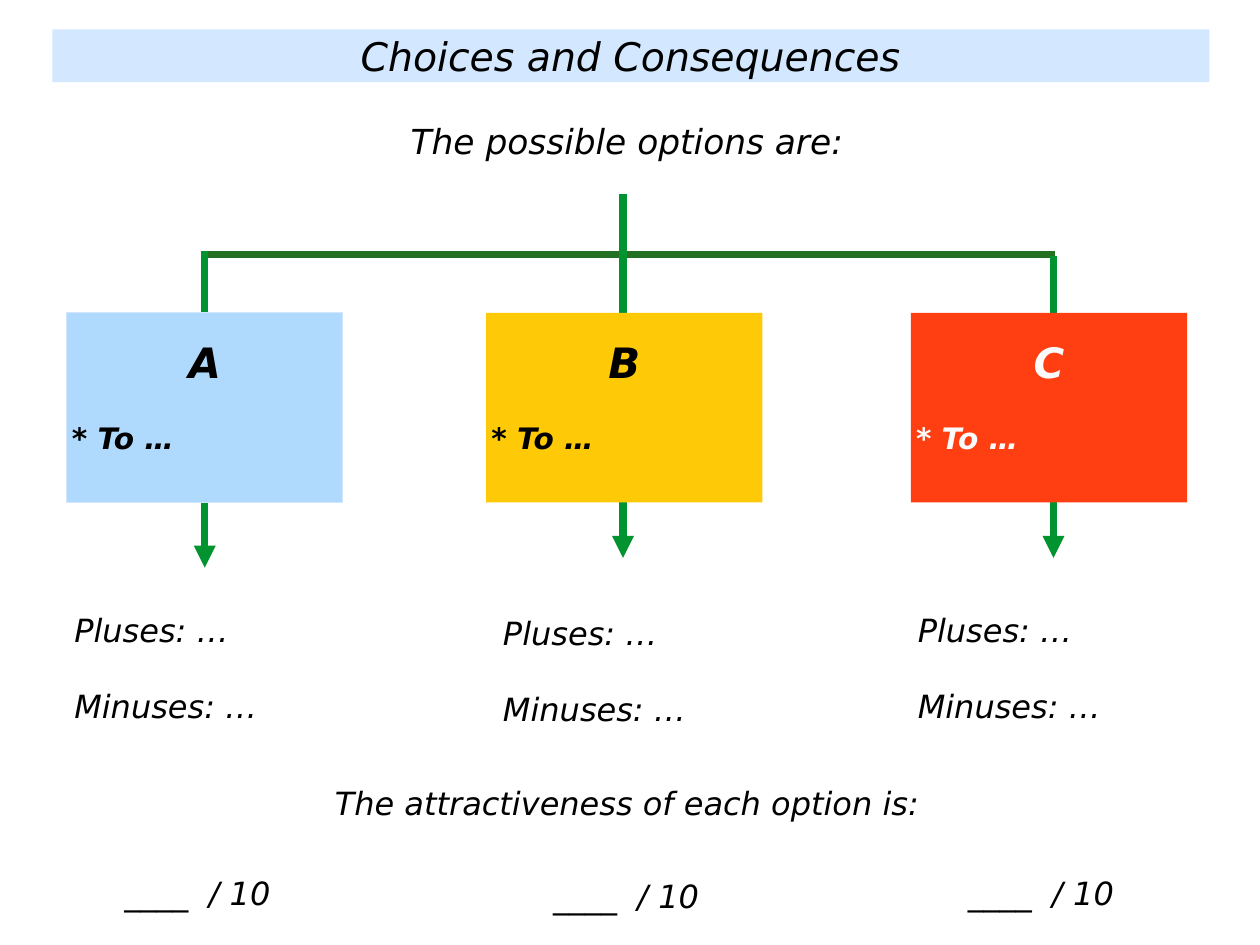
from dataclasses import dataclass
from typing import Optional

from pptx import Presentation
from pptx.dml.color import RGBColor
from pptx.enum.shapes import MSO_CONNECTOR as Connector, MSO_SHAPE as Preset
from pptx.enum.text import MSO_ANCHOR as Anchor, PP_ALIGN as Align
from pptx.oxml.ns import qn
from pptx.util import Cm, Pt

FONT = "DejaVu Sans"
BLACK = RGBColor(0x00, 0x00, 0x00)
OFF_WHITE = RGBColor(0xFB, 0xFB, 0xFB)
TITLE_BLUE = RGBColor(0xD3, 0xE8, 0xFF)
EDGE_BLUE = RGBColor(0xD2, 0xE6, 0xFF)
SKY = RGBColor(0xAF, 0xD9, 0xFD)
YELLOW = RGBColor(0xFE, 0xC9, 0x06)
RED = RGBColor(0xFF, 0x3E, 0x11)
GREEN = RGBColor(0x00, 0x93, 0x2F)
DARK_GREEN = RGBColor(0x25, 0x71, 0x24)

# Common measures in centimetres
CROSSBAR_Y = 7.29
BOX_TOP, BOX_WIDTH, BOX_HEIGHT = 8.97, 7.92, 5.44
RATING_WIDTH, RATING_HEIGHT = 7.37, 9.09
INSET = 0.15


@dataclass
class Option:
    letter: str
    fill: RGBColor
    ink: RGBColor
    box_left: float
    arrow_x: float
    arrow_top: float
    arrow_end: float
    rating_left: float
    rating_top: float
    edge: Optional[RGBColor] = None


OPTIONS = [
    Option("A", SKY, BLACK, 1.91, 5.87, 7.19, 16.28, 1.98, 17.37, EDGE_BLUE),
    Option("B", YELLOW, BLACK, 13.94, 17.86, 5.56, 16.0, 14.27, 17.45),
    Option("C", RED, OFF_WHITE, 26.11, 30.2, 7.34, 16.0, 26.16, 17.37),
]


def set_frame(shape, inset: float = INSET, top: Optional[float] = None, anchor=Anchor.TOP):
    """Prepare the text frame of a shape or text box."""
    frame = shape.text_frame
    frame.word_wrap = True
    frame.vertical_anchor = anchor
    frame.margin_left = frame.margin_right = frame.margin_bottom = Cm(inset)
    frame.margin_top = Cm(inset if top is None else top)
    return frame


def add_text(frame, text: str, *, size: float, color: RGBColor = BLACK, bold: bool = False,
             align=Align.CENTER, before: float = 0, line: Optional[float] = None) -> None:
    """Write one paragraph, using the empty first one when it is free."""
    first = frame.paragraphs[0]
    para = frame.add_paragraph() if first.runs else first
    para.alignment = align
    para.space_before = Pt(before)
    if line:
        para.line_spacing = Pt(line)
    span = para.add_run()
    span.text = text
    span.font.name = FONT
    span.font.size = Pt(size)
    span.font.bold = bold
    span.font.italic = True
    span.font.color.rgb = color


def add_box(page, left: float, top: float, width: float, height: float,
            fill: RGBColor, edge: Optional[RGBColor] = None):
    box = page.shapes.add_shape(Preset.RECTANGLE, Cm(left), Cm(top), Cm(width), Cm(height))
    box.shadow.inherit = False
    box.fill.solid()
    box.fill.fore_color.rgb = fill
    if edge is None:
        box.line.fill.background()
    else:
        box.line.color.rgb = edge
        box.line.width = Pt(1)
    return box


def add_textbox(page, left: float, top: float, width: float, height: float):
    return set_frame(page.shapes.add_textbox(Cm(left), Cm(top), Cm(width), Cm(height)))


def add_line(page, x1: float, y1: float, x2: float, y2: float,
             color: RGBColor, arrow: bool = False) -> None:
    line = page.shapes.add_connector(Connector.STRAIGHT, Cm(x1), Cm(y1), Cm(x2), Cm(y2))
    line.line.color.rgb = color
    line.line.width = Pt(6)
    properties = line._element.spPr
    if arrow:
        outline = properties.find(qn("a:ln"))
        head = outline.makeelement(qn("a:tailEnd"), {"type": "triangle"})
        outline.append(head)
    properties.append(properties.makeelement(qn("a:effectLst"), {}))


def add_option(page, option: Option) -> None:
    # Arrow running behind the box
    add_line(page, option.arrow_x, option.arrow_top, option.arrow_x, option.arrow_end,
             GREEN, arrow=True)

    # Coloured box
    box = add_box(page, option.box_left, BOX_TOP, BOX_WIDTH, BOX_HEIGHT,
                  option.fill, option.edge)
    frame = set_frame(box, top=1.14)
    add_text(frame, option.letter, size=34, color=option.ink, bold=True, line=28)
    add_text(frame, "* To …", size=24, color=option.ink, bold=True, align=Align.LEFT,
             before=28, line=28)

    # Pluses, minuses and score
    rating = add_textbox(page, option.rating_left, option.rating_top,
                         RATING_WIDTH, RATING_HEIGHT)
    add_text(rating, "Pluses: …", size=26, align=Align.LEFT)
    add_text(rating, "Minuses: …", size=26, align=Align.LEFT, before=30.3)
    add_text(rating, "____  / 10", size=26, before=121)


def main() -> None:
    deck = Presentation()
    deck.slide_width, deck.slide_height = Cm(36.12), Cm(27.1)
    page = deck.slides.add_slide(deck.slide_layouts[6])

    # Title and headings
    title = add_box(page, 1.5, 0.84, 33.17, 1.52, TITLE_BLUE)
    add_text(set_frame(title, inset=0.08, anchor=Anchor.MIDDLE),
             "Choices and Consequences", size=32)
    add_text(add_textbox(page, 1.6, 3.3, 32.74, 1.5), "The possible options are:", size=28)
    add_text(add_textbox(page, 3.28, 22.33, 29.41, 1.65),
             "The attractiveness of each option is:", size=26)

    # Crossbar and the three options
    add_line(page, 5.92, CROSSBAR_Y, 30.25, CROSSBAR_Y, DARK_GREEN)
    for option in OPTIONS:
        add_option(page, option)

    deck.save("out.pptx")


if __name__ == "__main__":
    main()
